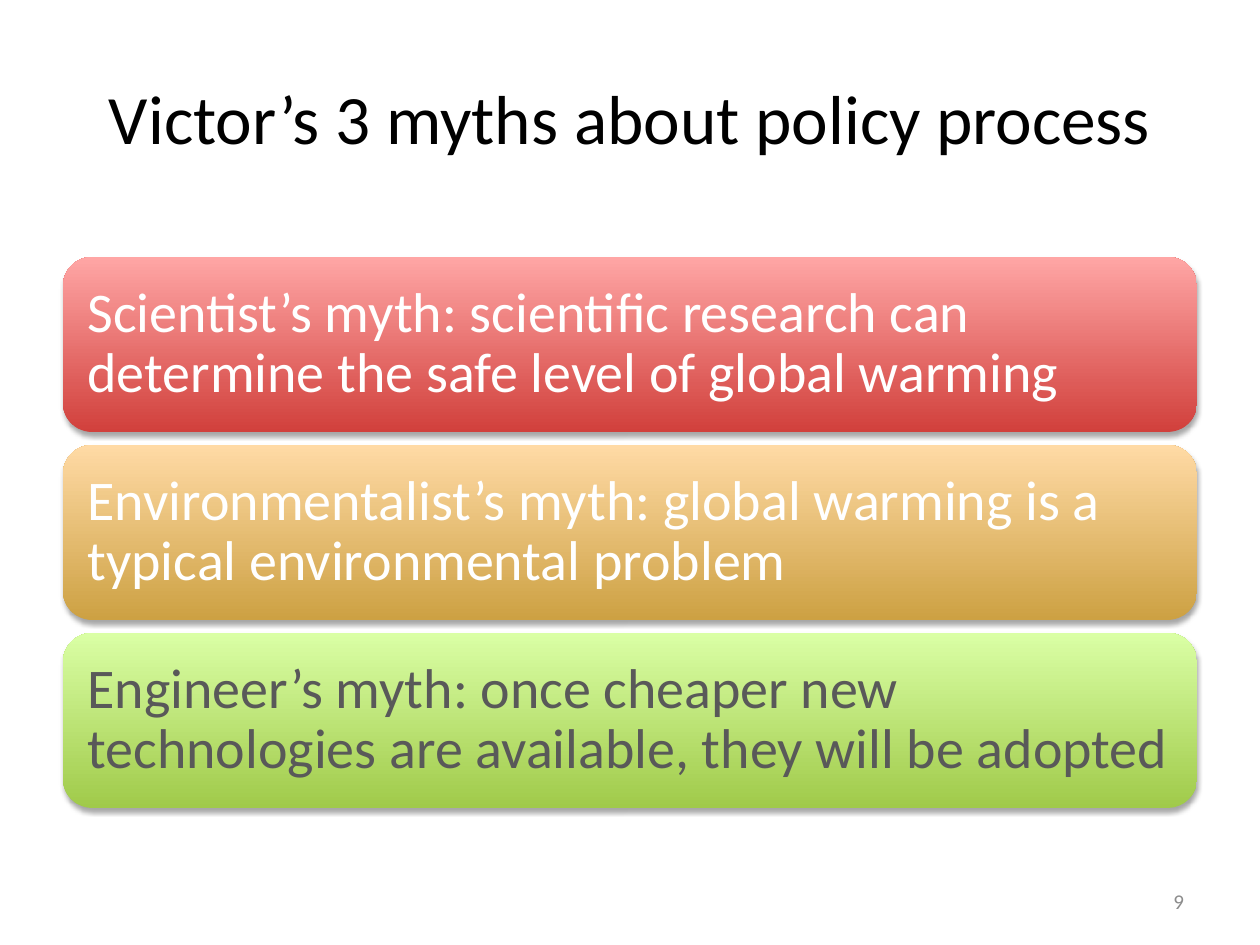
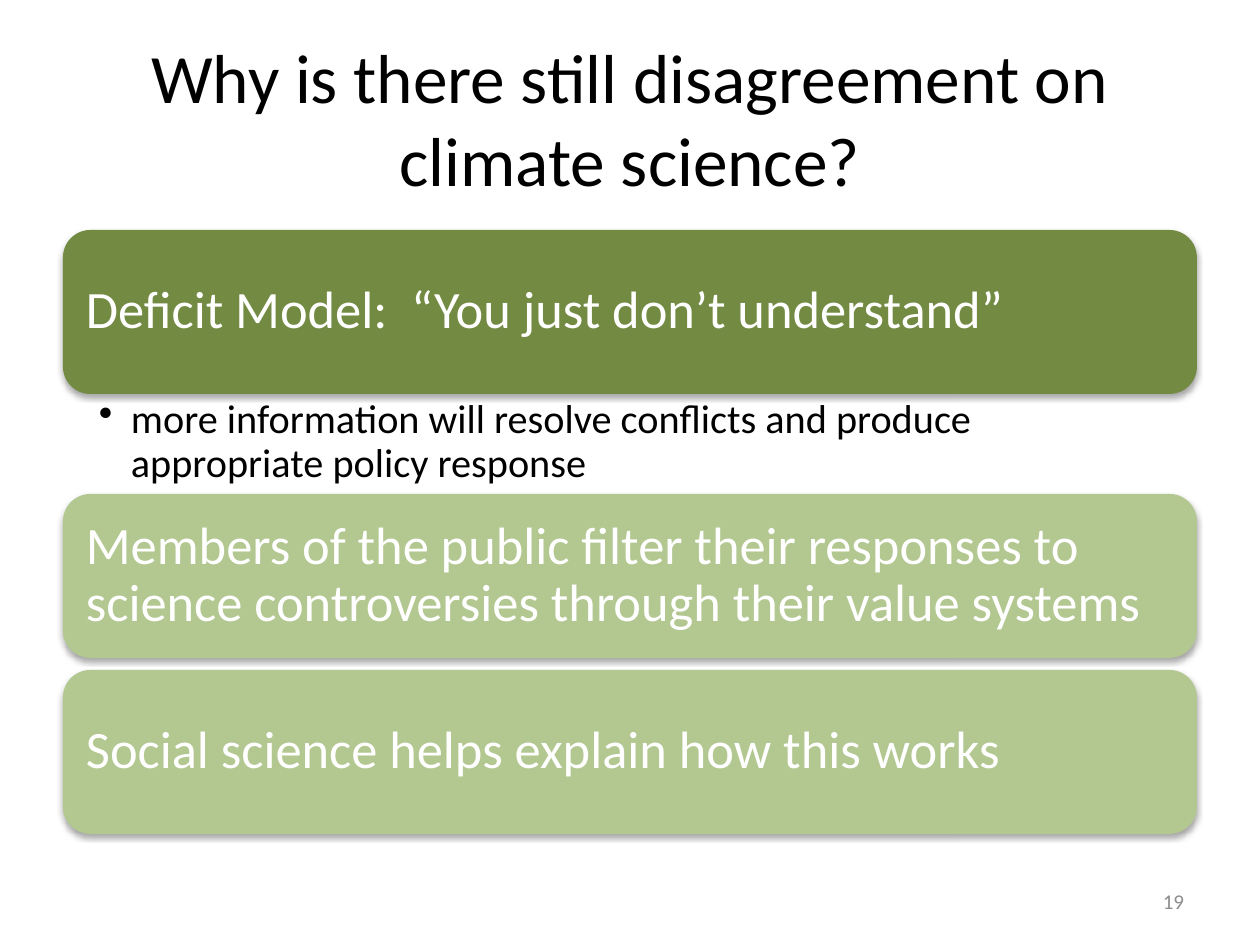
from dataclasses import dataclass

import pptx
import pptx.util
import pptx.dml.color
import pptx.enum.shapes
import pptx.enum.text
import pptx.oxml
import pptx.oxml.ns

SCALE = 914400 / 126  # EMU in one px
ALIGN = pptx.enum.text.PP_ALIGN
ANCHOR = pptx.enum.text.MSO_ANCHOR


@dataclass(frozen=True)
class Theme:
    font: str = "Calibri"
    black: str = "000000"
    white: str = "FFFFFF"
    dark_gray: str = "595959"
    number_gray: str = "8C8C8C"
    red: tuple = ("D1403C", "FFA6A5")  # gradients run from bottom to top
    amber: tuple = ("CDA143", "FFDAA5")
    lime: tuple = ("A0CA4A", "DAFFA5")
    dark_green: tuple = ("738A42",)
    light_green: tuple = ("B3C791",)
    title_size: float = 39.6
    myth_size: int = 32
    reason_size: int = 30
    detail_size: int = 23
    number_size: int = 12


THEME = Theme()

# Boxes in px: left, top, width, height
TITLE_BOX = (63, 38, 1134, 158)
NUMBER_BOX = (903, 876, 294, 50)
MYTHS_BOX = (63, 257, 1134, 551)
REASONS_BOX = (63, 230, 1134, 604)
MYTH_GAP = 13
REASON_GAP = 12
DETAIL_HEIGHT = 100

MYTHS = [
    ("Scientist’s myth: scientific research can determine the safe level of global warming",
     THEME.red, THEME.white),
    ("Environmentalist’s myth: global warming is a typical environmental problem",
     THEME.amber, THEME.white),
    ("Engineer’s myth: once cheaper new technologies are available, they will be adopted",
     THEME.lime, THEME.dark_gray),
]
# Text, fill and the detail listed below the band
REASONS = [
    ("Deficit Model:  “You just don’t understand”", THEME.dark_green,
     "more information will resolve conflicts and produce appropriate policy response"),
    ("Members of the public filter their responses to science controversies "
     "through their value systems", THEME.light_green, None),
    ("Social science helps explain how this works", THEME.light_green, None),
]


def px(length):
    return pptx.util.Emu(round(length * SCALE))


def rgb(color):
    return pptx.dml.color.RGBColor.from_string(color)


def write_text(shape, text, size, color, align=ALIGN.LEFT, anchor=ANCHOR.MIDDLE,
               insets=(13, 6, 13, 6), line_spacing=1.0):
    frame = shape.text_frame
    frame.word_wrap = True
    frame.vertical_anchor = anchor
    (frame.margin_left, frame.margin_top,
     frame.margin_right, frame.margin_bottom) = map(px, insets)
    paragraph = frame.paragraphs[0]
    paragraph.alignment = align
    paragraph.line_spacing = line_spacing
    run = paragraph.add_run()
    run.text = text
    run.font.name = THEME.font
    run.font.size = pptx.util.Pt(size)
    run.font.color.rgb = rgb(color)
    return paragraph


def add_text(slide, box, *style, **layout):
    return write_text(slide.shapes.add_textbox(*map(px, box)), *style, **layout)


def add_shadow(shape):
    shape.shadow.inherit = False
    effects = shape._element.spPr.find(pptx.oxml.ns.qn("a:effectLst"))
    effects.append(pptx.oxml.parse_xml(
        f'<a:outerShdw {pptx.oxml.ns.nsdecls("a")} blurRad="39370" dist="22860" '
        f'dir="5400000" rotWithShape="0"><a:srgbClr val="{THEME.black}">'
        '<a:alpha val="35000"/></a:srgbClr></a:outerShdw>'))


def add_band(slide, box, text, size, fill_colors, text_color, inset):
    """Rounded band with a solid fill, or a gradient if given two colours."""
    band = slide.shapes.add_shape(
        pptx.enum.shapes.MSO_SHAPE.ROUNDED_RECTANGLE, *map(px, box))
    if len(fill_colors) == 1:
        band.fill.solid()
        band.fill.fore_color.rgb = rgb(fill_colors[0])
    else:
        band.fill.gradient()
        band.fill.gradient_angle = 90
        for stop, color in zip(band.fill.gradient_stops, fill_colors):
            stop.color.rgb = rgb(color)
    band.line.fill.background()
    add_shadow(band)
    write_text(band, text, size, text_color, insets=(inset,) * 4, line_spacing=0.9)


def add_detail(slide, box, text):
    """Bulleted line below a band."""
    paragraph = add_text(slide, box, text, THEME.detail_size, THEME.black,
                         anchor=ANCHOR.TOP, insets=(36, 5, 29, 5), line_spacing=0.9)
    properties = paragraph._p.get_or_add_pPr()
    properties.set("marL", str(px(32)))
    properties.set("indent", str(-px(32)))
    properties.append(pptx.oxml.parse_xml(
        f'<a:buChar {pptx.oxml.ns.nsdecls("a")} char="•"/>'))


def add_myths(slide, box):
    left, top, width, height = box
    band_height = (height - MYTH_GAP * (len(MYTHS) - 1)) // len(MYTHS)
    for index, (text, fill_colors, text_color) in enumerate(MYTHS):
        band_top = top + index * (band_height + MYTH_GAP)
        add_band(slide, (left, band_top, width, band_height), text,
                 THEME.myth_size, fill_colors, text_color, inset=16)


def add_reasons(slide, box):
    left, top, width, height = box
    # A detail, or else a plain gap, follows every band but the last
    spaces = [DETAIL_HEIGHT if detail else REASON_GAP for _, _, detail in REASONS]
    spaces[-1] = 0
    band_height = (height - sum(spaces)) // len(REASONS)
    for (text, fill_colors, detail), space in zip(REASONS, spaces):
        add_band(slide, (left, top, width, band_height), text,
                 THEME.reason_size, fill_colors, THEME.white, inset=15)
        top += band_height
        if detail:
            add_detail(slide, (left, top, width, space), detail)
        top += space


def add_slide(presentation, title, number, add_body, body_box):
    """Slide with the shared title and number around its own body."""
    slide = presentation.slides.add_slide(presentation.slide_layouts[6])
    add_text(slide, TITLE_BOX, title, THEME.title_size, THEME.black, align=ALIGN.CENTER)
    add_body(slide, body_box)
    add_text(slide, NUMBER_BOX, number, THEME.number_size, THEME.number_gray,
             align=ALIGN.RIGHT)


def main():
    presentation = pptx.Presentation()
    presentation.slide_width = px(1260)
    presentation.slide_height = px(945)
    add_slide(presentation, "Victor’s 3 myths about policy process", "9",
              add_myths, MYTHS_BOX)
    add_slide(presentation, "Why is there still disagreement on climate science?", "19",
              add_reasons, REASONS_BOX)
    presentation.save("out.pptx")


if __name__ == "__main__":
    main()
